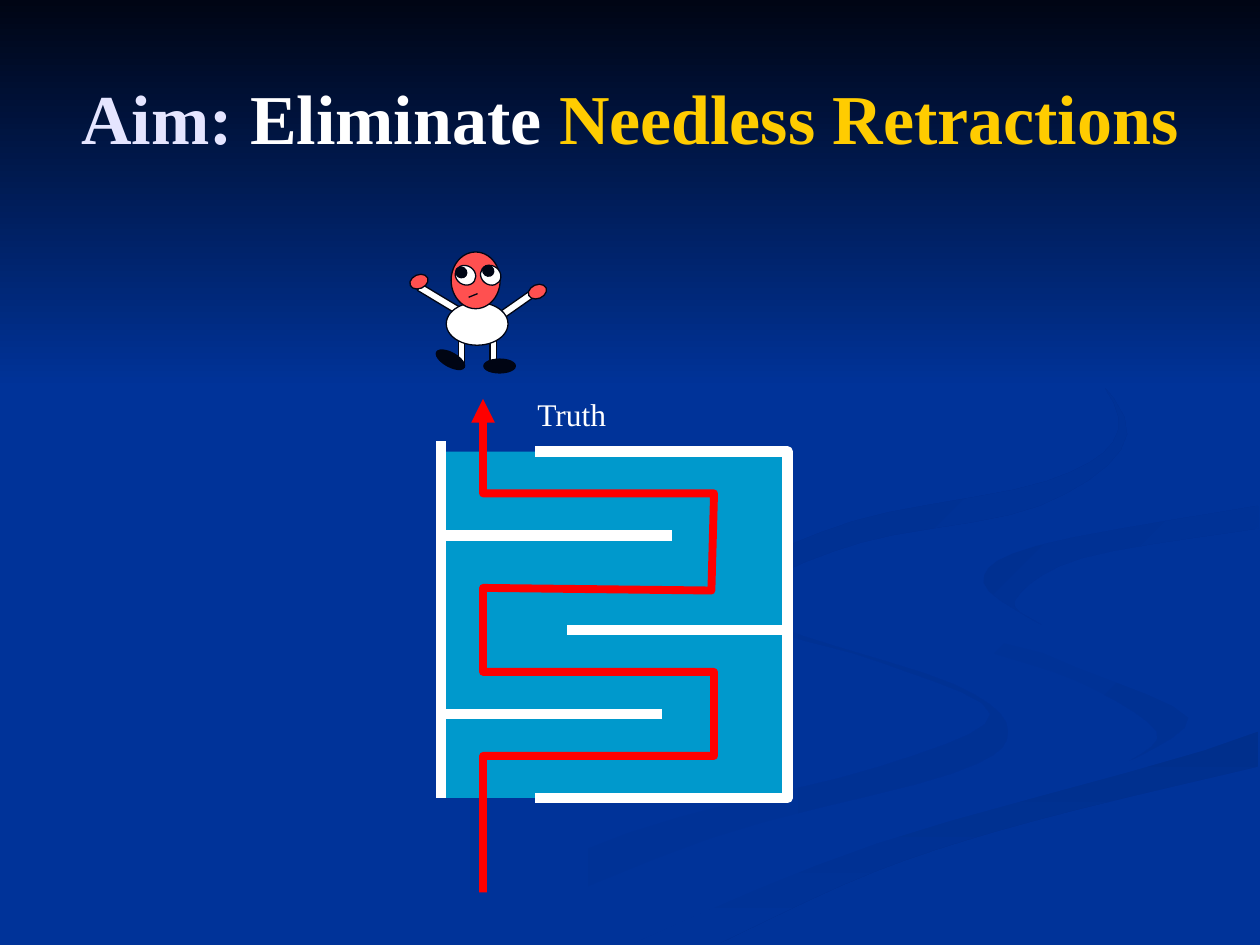
from lxml.etree import SubElement
from pptx import Presentation
from pptx.dml.color import RGBColor
from pptx.enum.shapes import MSO_CONNECTOR, MSO_SHAPE
from pptx.enum.text import MSO_ANCHOR, PP_ALIGN
from pptx.oxml.ns import qn
from pptx.util import Pt

FONT = "Times New Roman"
BLUE, INK, WHITE, RED, SKIN = "003399", "000514", "FFFFFF", "FF0000", "FF5050"
RECT, OVAL = MSO_SHAPE.RECTANGLE, MSO_SHAPE.OVAL
WIDTH, HEIGHT = 720, 540

# Background ribbons, back to front: gradient colours, angle, the two edges
RIBBONS = [
    ((BLUE, "003193"), 0,
     [(414, 330), (442, 357), (545, 391), (576, 418), (544, 442), (406, 479), (260, 539)],
     [(414, 330), (440, 359), (502, 378), (566, 408), (503, 438), (359, 476), (216, 539)]),
    ((BLUE, "003193"), 45,
     [(521, 334), (546, 359), (626, 382), (679, 410), (644, 436)],
     [(521, 334), (544, 364), (615, 389), (661, 418), (644, 436)]),
    (("002F8C", BLUE), 90,
     [(362, 539), (454, 499), (551, 466), (719, 418)],
     [(411, 539), (500, 498), (591, 469), (719, 438)]),
    ((BLUE, BLUE), 0,
     [(343, 539), (507, 472), (642, 436), (679, 410), (598, 374), (522, 334),
      (567, 304), (719, 279)],
     [(362, 539), (501, 482), (719, 418), (719, 387), (651, 374), (562, 333),
      (592, 312), (719, 289)]),
    (("003091", BLUE), 45,
     [(595, 357), (562, 333), (592, 312), (719, 289)],
     [(595, 357), (580, 343), (618, 319), (719, 302)]),
    (("002F8E", BLUE), 45,
     [(549, 168), (607, 198), (644, 248), (594, 289), (492, 310), (430, 338), (448, 360)],
     [(549, 168), (616, 205), (639, 246), (598, 275), (487, 298), (416, 333), (448, 360)]),
]

# Walker's body: shape, width, height, fill, then left, top and turn of each
WALKER = [
    (RECT, 28, 4.3, WHITE, [(237.6, 169.2, 31), (280, 172.8, -35)]),  # arms
    (RECT, 3.6, 18, WHITE, [(280, 190, 0), (262, 192, 0)]),           # legs
    (OVAL, 35.3, 24.5, WHITE, [(255, 172.8, 0)]),                     # trunk
    (OVAL, 28, 32.4, SKIN, [(257.8, 144, 0)]),                        # head
    (OVAL, 10.8, 12.2, WHITE, [(260.6, 151.2, -56), (275, 151.2, -52)]),  # eyes
    (OVAL, 6, 6.5, INK, [(260.6, 152.4, -56), (276, 151.5, -52)]),    # pupils
    (OVAL, 18, 7.9, INK, [(248.4, 201.6, 29), (276.5, 205.2, 0)]),    # feet
    (OVAL, 10.8, 7.9, SKIN, [(301.7, 162.7, -23), (234, 157, -23)]),  # hands
]


def rgb(value):
    return RGBColor.from_string(value)


def set_line(shape, color, width):
    shape.line.color.rgb = rgb(color)
    shape.line.width = Pt(width)


def set_gradient(shape, colors, angle):
    shape.fill.gradient()
    shape.fill.gradient_angle = -angle % 360
    for stop, color, position in zip(shape.fill.gradient_stops, colors, (0, 1)):
        stop.color.rgb = rgb(color)
        stop.position = position


def smooth_edge(knots, steps=5):
    """Points of a Catmull-Rom curve through the knots, kept on the slide."""
    padded = [knots[0], *knots, knots[-1]]
    curve = []
    for a, b, c, d in zip(padded, padded[1:], padded[2:], padded[3:]):
        for step in range(steps):
            t = step / steps
            x, y = (q + t / 2 * (r - p + t * (2 * p - 5 * q + 4 * r - s
                                              + t * (3 * q - p - 3 * r + s)))
                    for p, q, r, s in zip(a, b, c, d))
            curve.append((min(x, WIDTH), min(y, HEIGHT)))
    return curve + [knots[-1]]


def add_block(slide, kind, left, top, width, height, rotation=0, fill=None, outline=None):
    block = slide.shapes.add_shape(kind, Pt(left), Pt(top), Pt(width), Pt(height))
    block.shadow.inherit = False
    block.rotation = rotation
    if fill:
        block.fill.solid()
        block.fill.fore_color.rgb = rgb(fill)
    if outline:
        set_line(block, outline, 0.75)
    else:
        block.line.fill.background()
    return block


def add_outline(slide, points, close):
    corners = [(Pt(x), Pt(y)) for x, y in points]
    builder = slide.shapes.build_freeform(*corners[0], scale=1.0)
    builder.add_line_segments(corners[1:], close=close)
    outline = builder.convert_to_shape()
    outline.shadow.inherit = False
    return outline


def add_ribbon(slide, colors, angle, outer, inner):
    edges = smooth_edge(outer) + smooth_edge(inner)[::-1]
    ribbon = add_outline(slide, edges, close=True)
    set_gradient(ribbon, colors, angle)
    ribbon.line.fill.background()


def add_route(slide, points, color, width, arrow=False):
    route = add_outline(slide, points, close=False)
    route.fill.background()
    set_line(route, color, width)
    stroke = route.line._get_or_add_ln()
    SubElement(stroke, qn("a:round"))
    if arrow:
        SubElement(stroke, qn("a:tailEnd"), type="triangle")


def add_stroke(slide, x1, y1, x2, y2, color=WHITE, width=6):
    stroke = slide.shapes.add_connector(
        MSO_CONNECTOR.STRAIGHT, Pt(x1), Pt(y1), Pt(x2), Pt(y2))
    set_line(stroke, color, width)
    SubElement(stroke._element.spPr, qn("a:effectLst"))


def add_text(slide, runs, left, top, width, height, size=18, bold=False,
             align=PP_ALIGN.LEFT, anchor=MSO_ANCHOR.TOP, wrap=False):
    frame = slide.shapes.add_textbox(Pt(left), Pt(top), Pt(width), Pt(height)).text_frame
    frame.word_wrap = wrap
    frame.vertical_anchor = anchor
    paragraph = frame.paragraphs[0]
    paragraph.alignment = align
    for words, color in runs:
        run = paragraph.add_run()
        run.text = words
        run.font.name, run.font.size, run.font.bold = FONT, Pt(size), bold
        run.font.color.rgb = rgb(color)


def main():
    deck = Presentation()
    deck.slide_width, deck.slide_height = Pt(WIDTH), Pt(HEIGHT)
    slide = deck.slides.add_slide(deck.slide_layouts[6])

    # Background
    slide.background.fill.solid()
    slide.background.fill.fore_color.rgb = rgb(BLUE)
    for ribbon in RIBBONS:
        add_ribbon(slide, *ribbon)
    sky = add_block(slide, RECT, 0, 0, WIDTH, 222)
    set_gradient(sky, (INK, BLUE), 90)

    # Title
    add_text(slide, [("Aim: ", "E5E5FF"), ("Eliminate ", WHITE),
                     ("Needless Retractions", "FFCC00")],
             36, 21.6, 648, 90, size=40, bold=True, align=PP_ALIGN.CENTER,
             anchor=MSO_ANCHOR.MIDDLE, wrap=True)

    # Maze: floor, inner walls, outer walls
    left, right, top, bottom, door = 252, 450, 258, 456, 306
    add_block(slide, RECT, left, top, right - left, bottom - top, fill="0099CC")
    for start, end, y in ((left, 384, 306), (324, right, 360), (left, 378, 408)):
        add_stroke(slide, start, y, end, y)
    add_route(slide, [(door, top), (right, top), (right, bottom), (door, bottom)], WHITE, 6)
    add_stroke(slide, left, top - 6, left, bottom)

    # Way through the maze to the truth
    add_text(slide, [("Truth", WHITE)], 300, 222, 54.7, 28.8)
    near, far = 276, 408
    add_route(slide, [(near, 510), (near, 432), (far, 432), (far, 384), (near, 384),
                      (near, 336), (far - 1.5, 337.5), (far, 282), (near, 282), (near, 228)],
              RED, 4.5, arrow=True)

    # Walker
    for kind, width, height, fill, places in WALKER:
        for x, y, turn in places:
            add_block(slide, kind, x, y, width, height, turn, fill, outline=INK)
    add_stroke(slide, 267.8, 169.9, 272.9, 167.8, color=INK, width=0.75)

    deck.save("out.pptx")


if __name__ == "__main__":
    main()
